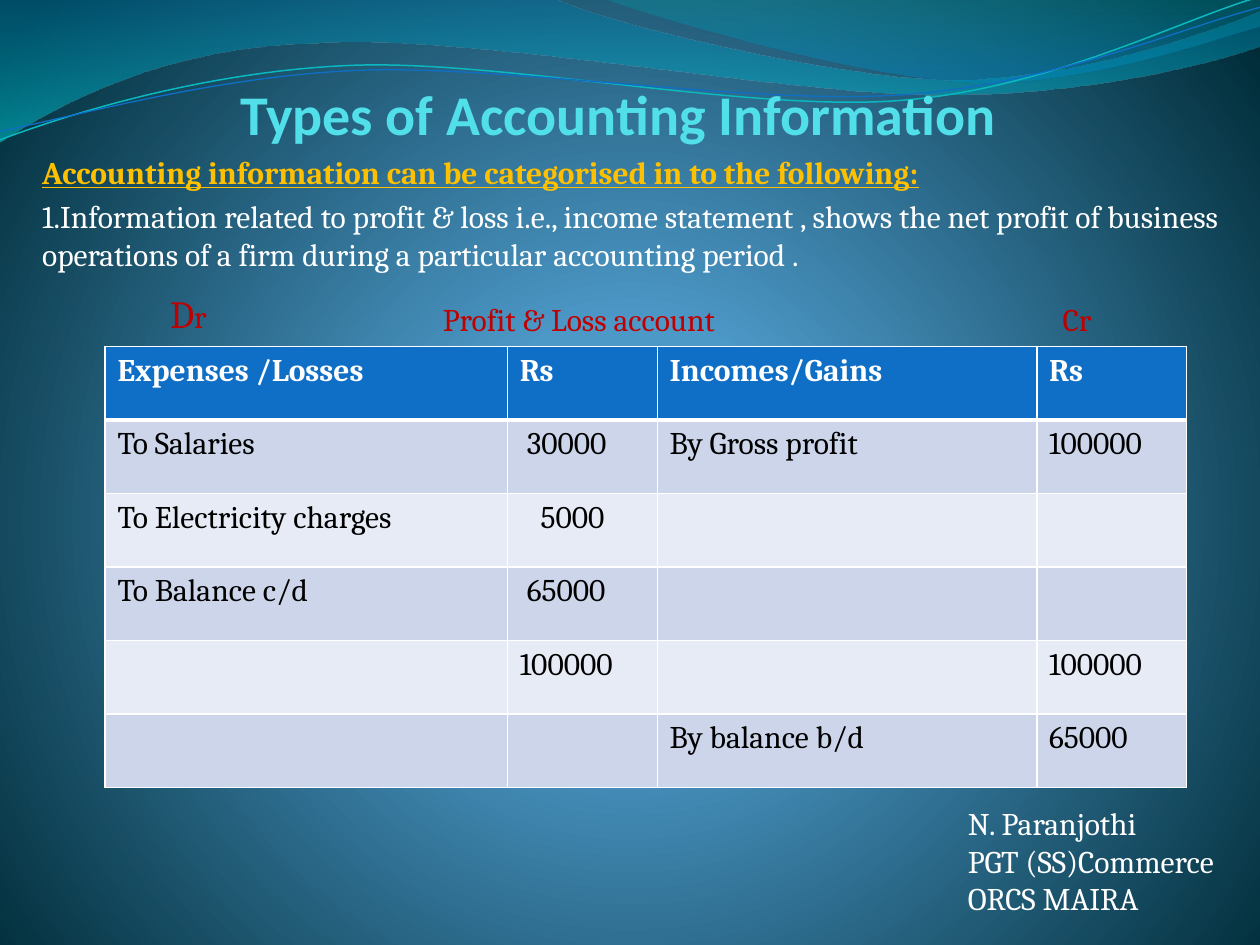
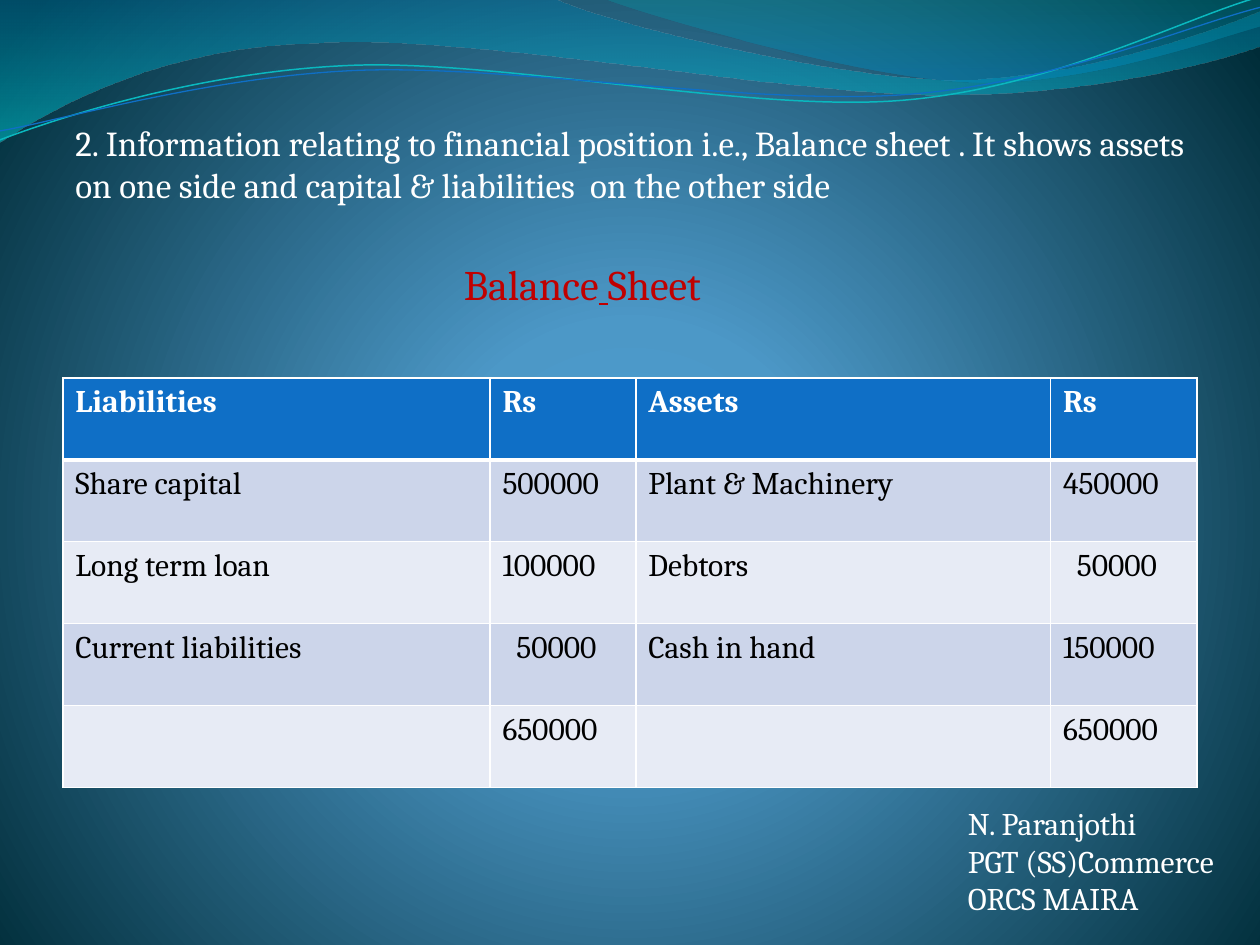
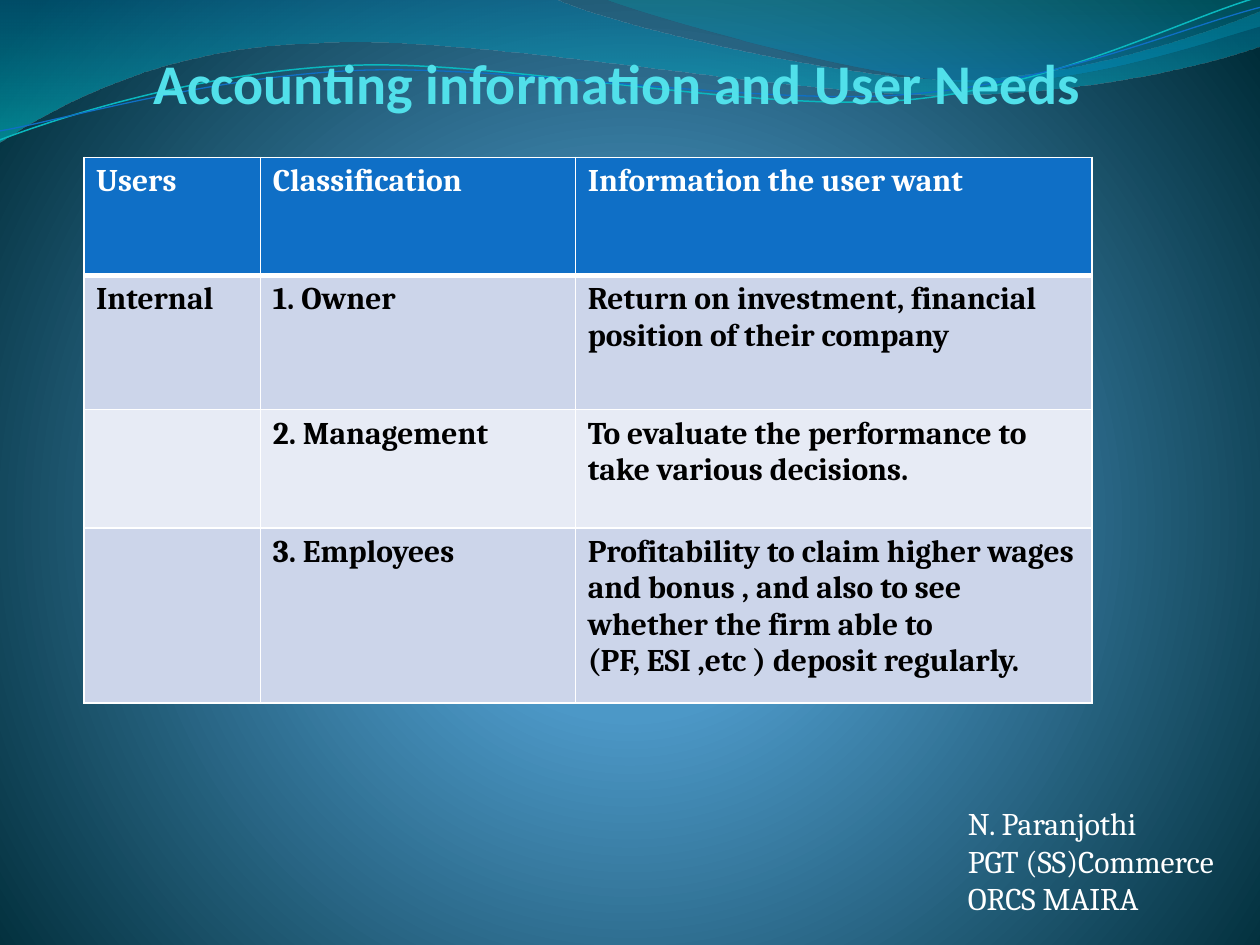
from dataclasses import dataclass, field
from typing import NamedTuple

from pptx import Presentation
from pptx.dml.color import RGBColor
from pptx.enum.text import MSO_ANCHOR, MSO_AUTO_SIZE, PP_ALIGN
from pptx.oxml import parse_xml
from pptx.oxml.ns import nsdecls, qn
from pptx.util import Cm, Pt

TOP, BOTTOM = MSO_ANCHOR.TOP, MSO_ANCHOR.BOTTOM
LEFT, CENTER = PP_ALIGN.LEFT, PP_ALIGN.CENTER
FIXED, GROW = MSO_AUTO_SIZE.NONE, MSO_AUTO_SIZE.SHAPE_TO_FIT_TEXT
TITLE_LAYOUT, TITLE_ONLY_LAYOUT, BLANK_LAYOUT = 0, 5, 6

WHITE, BLACK, RED, GOLD, AQUA = "FFFFFF", "000000", "C00000", "FFC000", "51E0EA"
HEADER_FILL = "0F6FC6"
BAND_FILLS = ("E7EBF5", "CCD5EA")


class Run(NamedTuple):
    text: str
    color: str = WHITE
    size: float = 18
    bold: bool = False
    underline: bool = False
    font: str = "Cambria"


class Frame(NamedTuple):
    left: float
    top: float
    width: float
    height: float


class Stop(NamedTuple):
    position: int
    color: str
    alpha: int = 100


@dataclass
class Label:
    frame: Frame
    paragraphs: list[list[Run]]
    wrap: bool = True


@dataclass
class Curve:
    """An outline in cm: pairs are straight steps, six numbers are a Bezier step."""
    start: tuple[float, float]
    steps: list[tuple[float, ...]]
    stops: list[Stop] = field(default_factory=list)
    line: str = ""
    weight: float = 0


@dataclass
class Grid:
    left: float
    top: float
    cols: list[float]
    rows: list[float]
    cells: list[list[str]]
    bold: bool = False
    indents: dict[tuple[int, int], float] = field(default_factory=dict)


BACKGROUND = [Stop(0, "4AA0D6"), Stop(25, "4C98C7"), Stop(100, "002C38")]
BACKGROUND_PATH = ('<a:path path="circle"><a:fillToRect l="10000" t="110000" '
                   'r="10000" b="100000"/></a:path>')
DOWNWARD = '<a:lin ang="5400000" scaled="0"/>'

WAVES = [
    Curve((0, 0), [(11.18, -0.03), (12.09, 0.43, 16.87, 1.6, 19.25, 1.6),
                   (21.67, 1.6, 24.33, 0.66, 25.4, 0.23), (25.43, 0.91),
                   (24.97, 1.12, 22.1, 1.93, 18.95, 1.91),
                   (15.8, 1.91, 9.7, 0.71, 6.53, 0.86),
                   (3.28, 0.91, 1.17, 2.11, -0.03, 2.87)],
          stops=[Stop(0, "0074A1", 45), Stop(100, "00C6CF", 55)]),
    Curve((12.17, -0.03), [(12.93, 0.28, 17.32, 1.57, 19.53, 1.65),
                           (21.74, 1.75, 24.41, 0.81, 25.4, 0.53), (25.4, 0)],
          stops=[Stop(0, "00A1A9", 30), Stop(80, "008BBF", 45)]),
    Curve((0, 2.82), [(1.22, 2.36, 4.01, 1.45, 7.04, 1.32),
                      (10.03, 1.19, 15.06, 2.26, 18.11, 2.03),
                      (21.16, 1.8, 23.83, 0.38, 25.35, -0.05)],
          line="0AB8BF", weight=0.85),
    Curve((0, 2.64), [(1.19, 2.44, 4.17, 1.55, 7.19, 1.42),
                      (10.24, 1.3, 15.16, 2.13, 18.21, 1.91),
                      (21.23, 1.7, 23.9, 0.53, 25.4, 0.15)],
          line="0F6FC6", weight=0.75),
]
AUTHOR = Label(Frame(19.26, 16.08, 5.72, 2.57),
               [[Run("N. Paranjothi")], [Run("PGT (SS)Commerce")], [Run("ORCS MAIRA")]])

PROFIT_AND_LOSS = Grid(
    2.12, 6.99, [8.11, 3.02, 7.65, 3.02], [1.48] * 6,
    [["Expenses /Losses", "Rs", "Incomes/Gains", "Rs"],
     ["To Salaries", "30000", "By Gross profit", "100000"],
     ["To Electricity charges", "5000", "", ""],
     ["To Balance c/d", "65000", "", ""],
     ["", "100000", "", "100000"],
     ["", "", "By balance b/d", "65000"]],
    indents={(1, 1): 0.14, (2, 1): 0.42, (3, 1): 0.14})
BALANCE_SHEET = Grid(
    1.27, 7.62, [8.61, 2.94, 8.36, 2.95], [1.65] * 5,
    [["Liabilities", "Rs", "Assets", "Rs"],
     ["Share capital", "500000", "Plant & Machinery", "450000"],
     ["Long term loan", "100000", "Debtors", "50000"],
     ["Current liabilities", "50000", "Cash in hand", "150000"],
     ["", "650000", "", "650000"]],
    indents={(2, 3): 0.28, (3, 1): 0.28})
USER_NEEDS = Grid(
    1.69, 3.17, [3.56, 6.35, 10.41], [2.38, 2.71, 2.38, 3.53],
    [["Users", "Classification", "Information the user want"],
     ["Internal", "1. Owner", "Return on investment, financial position of their company"],
     ["", "2. Management", "To evaluate the performance to take various decisions."],
     ["", "3. Employees", "Profitability to claim higher wages and bonus , and also to see "
      "whether the firm able to\n(PF, ESI ,etc ) deposit regularly."]],
    bold=True)


def rgb(color: str) -> RGBColor:
    return RGBColor.from_string(color)


def set_values(target, values: dict) -> None:
    for name, value in values.items():
        setattr(target, name, value)


def place(sp, frame: Frame) -> None:
    set_values(sp, {name: Cm(v) for name, v in frame._asdict().items()})


def write(tf, paragraphs: list[list[Run]], align=None) -> None:
    for i, runs in enumerate(paragraphs):
        p = tf.add_paragraph() if i else tf.paragraphs[0]
        p.alignment = align
        for run in runs:
            r = p.add_run()
            r.text = run.text
            set_values(r.font, {"name": run.font, "size": Pt(run.size),
                                "bold": run.bold, "underline": run.underline})
            r.font.color.rgb = rgb(run.color)


def add_label(slide, label: Label):
    sp = slide.shapes.add_textbox(*map(Cm, label.frame))
    set_values(sp.text_frame, {"word_wrap": label.wrap, "auto_size": GROW})
    write(sp.text_frame, label.paragraphs)
    return sp


def fill_placeholder(sp, frame: Frame, paragraphs: list[list[Run]],
                     align, anchor, margin: float) -> None:
    place(sp, frame)
    set_values(sp.text_frame, {
        "margin_left": 0, "margin_right": Cm(0.05), "margin_top": Cm(margin),
        "margin_bottom": Cm(margin), "vertical_anchor": anchor,
        "word_wrap": True, "auto_size": FIXED})
    write(sp.text_frame, paragraphs, align)


def add_title(slide, text: str, frame: Frame) -> None:
    run = Run(text, AQUA, 32, bold=True, font="Calibri")
    fill_placeholder(slide.shapes.title, frame, [[run]], CENTER, BOTTOM, 0)


def set_gradient(fill, owner, stops: list[Stop], direction: str) -> None:
    """Give a fill, found inside the element owner, stops with transparency."""
    fill.gradient()
    grad = owner.find(".//" + qn("a:gradFill"))
    marks = "".join(
        f'<a:gs pos="{s.position * 1000}"><a:srgbClr val="{s.color}">'
        f'<a:alpha val="{s.alpha * 1000}"/></a:srgbClr></a:gs>' for s in stops)
    grad.getparent().replace(grad, parse_xml(
        f'<a:gradFill {nsdecls("a")} rotWithShape="1"><a:gsLst>{marks}</a:gsLst>'
        f'{direction}</a:gradFill>'))


def bend(sp, steps: list[tuple[float, ...]]) -> None:
    """Join the three straight segments of each six-number step into one Bezier."""
    segments = iter(sp.element.findall(".//" + qn("a:lnTo")))
    for step in steps:
        first = next(segments)
        if len(step) == 6:
            bezier = parse_xml(f'<a:cubicBezTo {nsdecls("a")}/>')
            first.addprevious(bezier)
            for segment in (first, next(segments), next(segments)):
                bezier.append(segment[0])
                segment.getparent().remove(segment)


def add_curve(slide, curve: Curve):
    builder = slide.shapes.build_freeform(*map(Cm, curve.start))
    points = [(Cm(step[i]), Cm(step[i + 1]))
              for step in curve.steps for i in range(0, len(step), 2)]
    builder.add_line_segments(points, close=bool(curve.stops))
    sp = builder.convert_to_shape()
    bend(sp, curve.steps)
    sp.shadow.inherit = False
    if curve.stops:
        set_gradient(sp.fill, sp.element, curve.stops, DOWNWARD)
        sp.line.fill.background()
    else:
        sp.fill.background()
        sp.line.color.rgb = rgb(curve.line)
        sp.line.width = Pt(curve.weight)
    return sp


def build_master(master, slide) -> None:
    """Draw the shared parts on a slide, then hand them to the master."""
    set_gradient(master.background.fill, master.element, BACKGROUND, BACKGROUND_PATH)
    shared = [add_curve(slide, curve) for curve in WAVES] + [add_label(slide, AUTHOR)]
    for number, sp in enumerate(shared, start=100):
        sp.element.find(".//" + qn("p:cNvPr")).set("id", str(number))
        master.shapes.element.append(sp.element)


def set_borders(cell, top: float, bottom: float) -> None:
    tc_pr = cell._tc.get_or_add_tcPr()
    sides = {"lnL": 1, "lnR": 1, "lnT": top, "lnB": bottom}
    for i, (side, weight) in enumerate(sides.items()):
        tc_pr.insert(i, parse_xml(
            f'<a:{side} {nsdecls("a")} w="{Pt(weight)}"><a:solidFill>'
            f'<a:srgbClr val="{WHITE}"/></a:solidFill></a:{side}>'))


def add_grid(slide, grid: Grid) -> None:
    table = slide.shapes.add_table(
        len(grid.rows), len(grid.cols), Cm(grid.left), Cm(grid.top),
        Cm(sum(grid.cols)), Cm(sum(grid.rows))).table
    for column, width in zip(table.columns, grid.cols):
        column.width = Cm(width)
    for i, (height, texts) in enumerate(zip(grid.rows, grid.cells)):
        table.rows[i].height = Cm(height)
        for j, text in enumerate(texts):
            cell = table.cell(i, j)
            cell.fill.solid()
            cell.fill.fore_color.rgb = rgb(BAND_FILLS[i % 2] if i else HEADER_FILL)
            cell.margin_left = Cm(0.25 + grid.indents.get((i, j), 0))
            set_borders(cell, top=3 if i == 1 else 1, bottom=1 if i else 3)
            if text:
                color = BLACK if i else WHITE
                write(cell.text_frame, [[Run(line, color, bold=grid.bold or i == 0)]
                                        for line in text.split("\n")])


def build_profit_slide(slide) -> None:
    add_title(slide, "Types of Accounting Information", Frame(1.48, 1.48, 22.02, 1.48))
    fill_placeholder(slide.placeholders[1], Frame(0.85, 2.95, 23.93, 3.18), [
        [Run("Accounting information can be categorised in to the following:",
             GOLD, bold=True, underline=True)],
        [Run("1.Information related to profit & loss i.e., income statement , shows the "
             "net profit of business operations of a firm during a particular "
             "accounting period .")]], LEFT, TOP, 0.13)
    add_grid(slide, PROFIT_AND_LOSS)
    for label in (
            Label(Frame(8.68, 5.92, 6.38, 1.02), [[Run("Profit & Loss account", RED)]], False),
            Label(Frame(21.17, 5.92, 1.17, 1.02), [[Run("Cr", RED)]], False),
            Label(Frame(3.18, 5.72, 1.47, 1.19), [[Run("D", RED, 22), Run("r", RED)]], False)):
        add_label(slide, label)


def build_balance_slide(slide) -> None:
    add_label(slide, Label(Frame(1.27, 2.33, 23.06, 1.96), [[Run(
        "2. Information relating to financial position i.e., Balance sheet . It shows "
        "assets on one side and capital & liabilities  on the other side", size=20)]]))
    add_label(slide, Label(Frame(9.1, 5.08, 6.15, 1.27), [[
        Run("Balance", RED, 24), Run(" ", RED, 24, underline=True), Run("Sheet", RED, 24)]]))
    add_grid(slide, BALANCE_SHEET)


def build_users_slide(slide) -> None:
    add_title(slide, "Accounting information and User Needs ", Frame(0.43, 1.07, 24.33, 1.27))
    add_grid(slide, USER_NEEDS)


def main() -> None:
    prs = Presentation()
    prs.slide_width, prs.slide_height = Cm(25.4), Cm(19.05)
    profit, balance, users = (
        prs.slides.add_slide(prs.slide_layouts[i])
        for i in (TITLE_LAYOUT, BLANK_LAYOUT, TITLE_ONLY_LAYOUT))
    build_master(prs.slide_master, balance)
    build_profit_slide(profit)
    build_balance_slide(balance)
    build_users_slide(users)
    prs.save("out.pptx")


if __name__ == "__main__":
    main()
